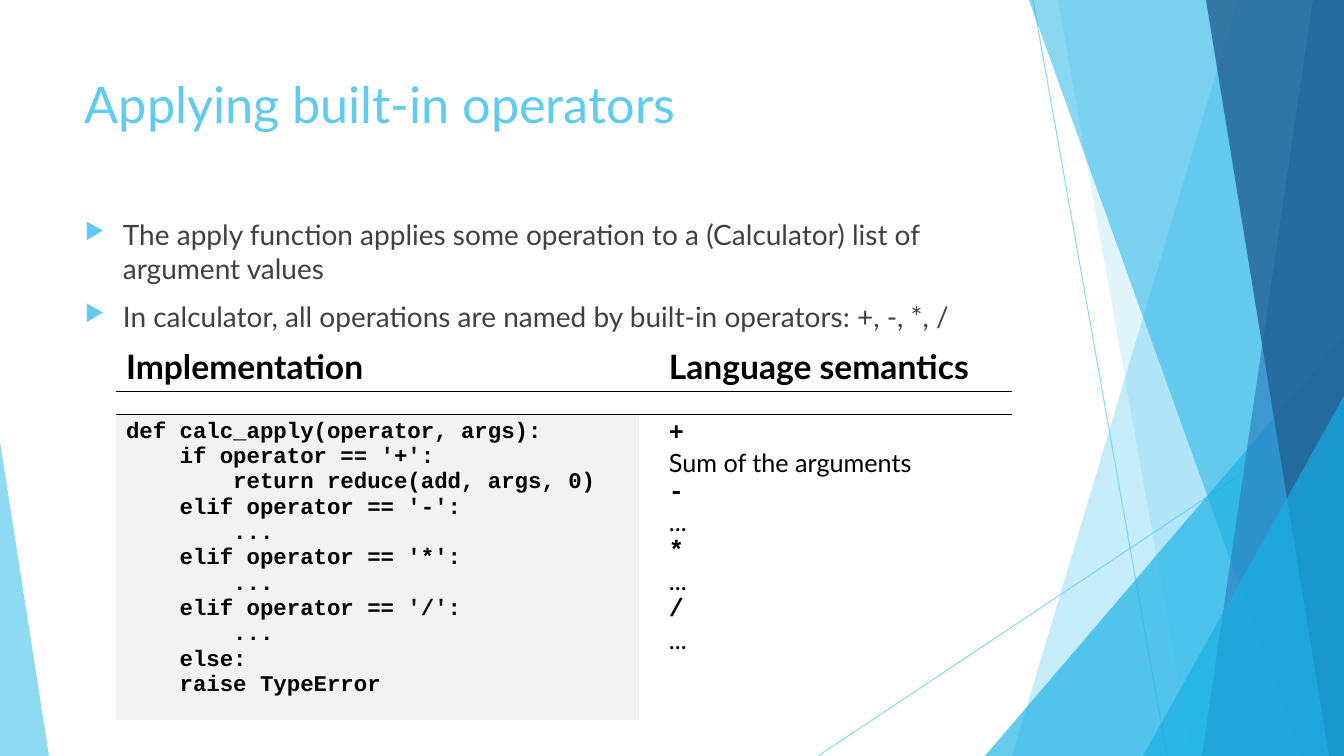
from lxml.etree import SubElement
from pptx import Presentation
from pptx.dml.color import RGBColor
from pptx.enum.shapes import MSO_CONNECTOR as Connector, MSO_SHAPE as Preset
from pptx.oxml.ns import qn
from pptx.oxml.xmlchemy import OxmlElement
from pptx.util import Emu, Pt

WIDTH, HEIGHT = 1344, 756
SCALE = 12192000 / WIDTH
SANS, MONO = "Lato", "Courier New"
COLORS = {
    "sky": "5FCBEF", "cyan": "17B0E4", "blue": "2E83C3", "navy": "226292",
    "text": "404040", "black": "000000", "code": "F2F2F2",
}

TITLE = "Applying built-in operators"
BULLETS = [
    "The apply function applies some operation to a (Calculator) list of argument values",
    "In calculator, all operations are named by built-in operators: +, -, *, /",
]
HEADERS = ["Implementation", "Language semantics"]
CODE = [
    "def calc_apply(operator, args):",
    "    if operator == '+':",
    "        return reduce(add, args, 0)",
    "    elif operator == '-':",
    "        ...",
    "    elif operator == '*':",
    "        ...",
    "    elif operator == '/':",
    "        ...",
    "    else:",
    "    raise TypeError",
]
SEMANTICS = [("+", "Sum of the arguments"), ("-", "..."), ("*", "..."), ("/", "...")]

RAYS = [(1033, 0, 1167, HEIGHT), (WIDTH, 406, 818, HEIGHT)]
FACETS = [
    ("band", 1238, 1012, "sky", 36),
    ("band", 1058, 1192, "sky", 20),
    ("triangle", 985, 336, 359, 1, "cyan", 66),
    ("band", 1029, 1301, "cyan", 50),
    ("band", 1313, 1202, "blue", 70),
    ("band", 1206, 1329, "navy", 80),
    ("triangle", 1143, 396, 201, 1, "cyan", 66),
    ("triangle", 0, 442, 49, 0, "sky", 70),
]
TITLE_BOX = (75, 68, 948, 145)
BODY_BOX = (75, 213, 948, 145)
TABLE_LEFT, TABLE_TOP = 116, 341
COLUMN_WIDTHS = [523, 373]
ROW_HEIGHTS = [50, 23, 290]
SEMANTICS_INSET = 30
BULLET_INDENT = 38


def px(value):
    return Emu(round(value * SCALE))


def color(name):
    return RGBColor.from_string(COLORS[name])


def set_alpha(shape, percent):
    for node in shape._element.spPr.iter(qn("a:srgbClr")):
        SubElement(node, qn("a:alpha"), val=str(percent * 1000))


def add_ray(slide, ends):
    ray = slide.shapes.add_connector(Connector.STRAIGHT, *map(px, ends))
    ray.line.color.rgb = color("sky")
    ray.line.width = Pt(0.75)
    SubElement(ray._element.spPr, qn("a:effectLst"))
    set_alpha(ray, 70)


def add_facet(slide, kind, *geometry, fill, alpha):
    if kind == "band":
        top_x, bottom_x = geometry
        builder = slide.shapes.build_freeform(top_x, 0, scale=SCALE)
        builder.add_line_segments([(WIDTH, 0), (WIDTH, HEIGHT), (bottom_x, HEIGHT)])
        facet = builder.convert_to_shape()
    else:
        left, top, width, apex = geometry
        box = map(px, (left, top, width, HEIGHT - top))
        facet = slide.shapes.add_shape(Preset.ISOSCELES_TRIANGLE, *box)
        facet.adjustments[0] = apex
    facet.shadow.inherit = False
    facet.fill.solid()
    facet.fill.fore_color.rgb = color(fill)
    facet.line.fill.background()
    set_alpha(facet, alpha)


def add_run(paragraph, text, size, font=SANS, fill="black", bold=False):
    run = paragraph.add_run()
    run.text = text
    run.font.size = Pt(size)
    run.font.name = font
    run.font.bold = bold
    run.font.color.rgb = color(fill)


def paragraphs(frame, items):
    for index, item in enumerate(items):
        yield (frame.add_paragraph() if index else frame.paragraphs[0]), item


def add_text_frame(slide, box):
    frame = slide.shapes.add_textbox(*map(px, box)).text_frame
    frame.word_wrap = True
    return frame


def set_bullet(paragraph):
    properties = paragraph._p.get_or_add_pPr()
    properties.set("marL", str(px(BULLET_INDENT)))
    properties.set("indent", str(px(-BULLET_INDENT)))
    SubElement(SubElement(properties, qn("a:buClr")), qn("a:srgbClr"), val=COLORS["sky"])
    SubElement(properties, qn("a:buSzPct"), val="80000")
    SubElement(properties, qn("a:buChar"), char="▶")


def add_bottom_border(cell):
    border = OxmlElement("a:lnB")
    border.set("w", str(Pt(1)))
    SubElement(SubElement(border, qn("a:solidFill")), qn("a:srgbClr"), val=COLORS["black"])
    cell._tc.get_or_add_tcPr().insert(0, border)


def add_operator_table(slide):
    box = (TABLE_LEFT, TABLE_TOP, sum(COLUMN_WIDTHS), sum(ROW_HEIGHTS))
    table = slide.shapes.add_table(
        len(ROW_HEIGHTS), len(COLUMN_WIDTHS), *map(px, box)).table
    table.first_row = table.horz_banding = False
    style = table._tbl.tblPr.find(qn("a:tableStyleId"))
    style.text = "{2D5ABB26-0587-4C30-8999-92F81FD0307C}"
    for column, width in zip(table.columns, COLUMN_WIDTHS):
        column.width = px(width)
    for row, height in zip(table.rows, ROW_HEIGHTS):
        row.height = px(height)
    for cell in table.iter_cells():
        cell.fill.background()

    for index, header in enumerate(HEADERS):
        heading, spacer = table.cell(0, index), table.cell(1, index)
        add_run(heading.text_frame.paragraphs[0], header, 24, bold=True)
        spacer.margin_top = spacer.margin_bottom = 0
        spacer.text_frame.paragraphs[0]._p.get_or_add_endParaRPr().set("sz", "400")
        add_bottom_border(heading)
        add_bottom_border(spacer)

    code, semantics = table.cell(2, 0), table.cell(2, 1)
    code.fill.solid()
    code.fill.fore_color.rgb = color("code")
    for paragraph, line in paragraphs(code.text_frame, CODE):
        add_run(paragraph, line, 16, MONO, bold=True)
    for paragraph, (operator, meaning) in paragraphs(semantics.text_frame, SEMANTICS):
        add_run(paragraph, operator, 18, MONO, bold=True)
        paragraph.add_line_break()
        add_run(paragraph, meaning, 18)
    for row in range(len(ROW_HEIGHTS)):
        table.cell(row, 1).margin_left = px(SEMANTICS_INSET)


def main():
    presentation = Presentation()
    presentation.slide_width, presentation.slide_height = px(WIDTH), px(HEIGHT)
    slide = presentation.slides.add_slide(presentation.slide_layouts[6])
    for ends in RAYS:
        add_ray(slide, ends)
    for *geometry, fill, alpha in FACETS:
        add_facet(slide, *geometry, fill=fill, alpha=alpha)

    title = add_text_frame(slide, TITLE_BOX)
    add_run(title.paragraphs[0], TITLE, 36, fill="sky")
    body = add_text_frame(slide, BODY_BOX)
    for paragraph, bullet in paragraphs(body, BULLETS):
        paragraph.space_before = Pt(10)
        set_bullet(paragraph)
        add_run(paragraph, bullet, 20, fill="text")
    add_operator_table(slide)
    presentation.save("out.pptx")


if __name__ == "__main__":
    main()
